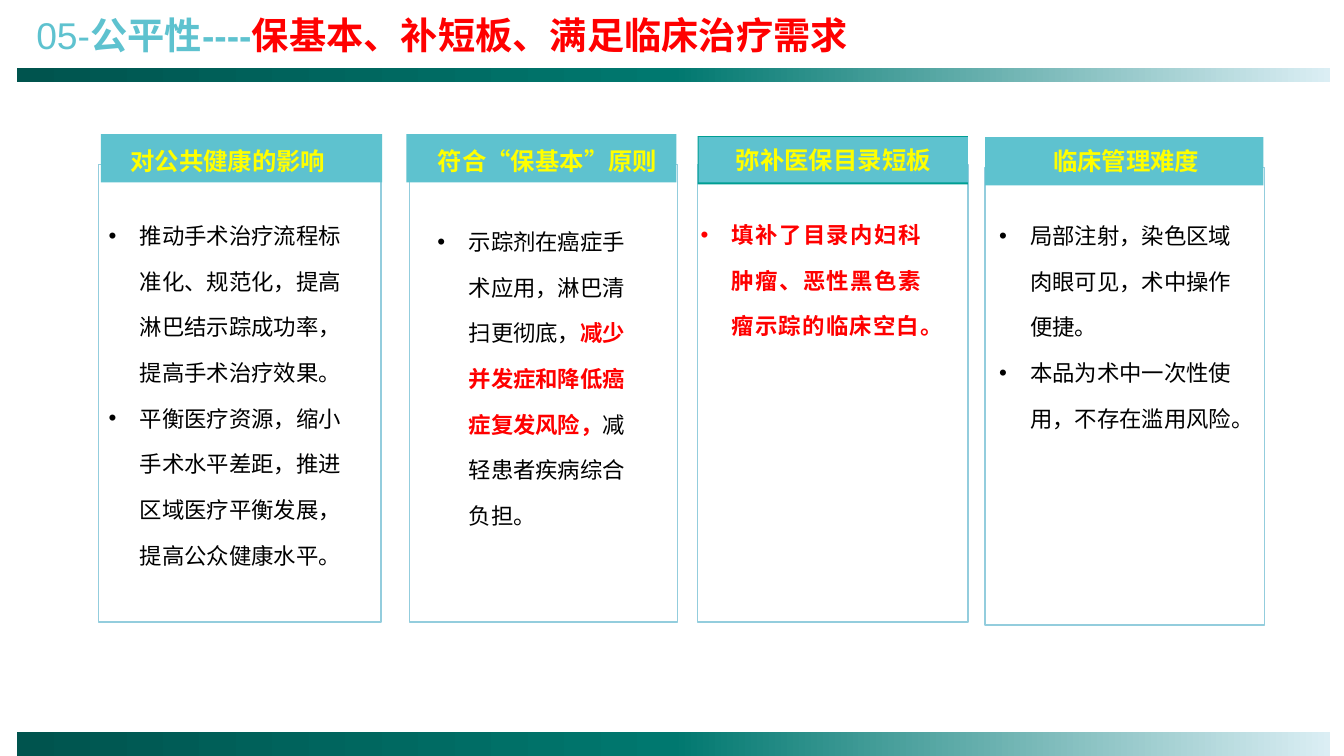
from copy import deepcopy
from dataclasses import dataclass

from lxml import etree
from pptx import Presentation
from pptx.dml.color import RGBColor
from pptx.enum.shapes import MSO_SHAPE as Shape
from pptx.enum.text import MSO_ANCHOR as Anchor, MSO_AUTO_SIZE as AutoSize, PP_ALIGN as Align
from pptx.oxml.ns import qn
from pptx.util import Inches, Pt

COLORS = {
    "teal": "5EC2CF", "deep": "009E93", "outline": "93CDDD", "yellow": "FFFF00",
    "red": "FF0000", "black": "000000",
    "bar_start": "00544E", "bar_middle": "00786F", "bar_end": "DBEEF4",
}
FONT = "Arial"


@dataclass
class Card:
    box: tuple
    band: tuple
    label: tuple
    body: tuple
    heading: str
    paragraphs: list
    band_color: str = "teal"
    label_color: str = ""
    align: Align = Align.LEFT


CARDS = [
    Card((0.98, 1.63, 2.8, 4.54), (0.02, -0.3, 2.79, 0.48), (0.05, -0.26, 2.46, 0.45),
         (0, 0.34, 2.66, 4.11), "对公共健康的影响",
         [[("推动手术治疗流程标准化、规范化，提高淋巴结示踪成功率，提高手术治疗效果。", "black", False)],
          [("平衡医疗资源，缩小手术水平差距，推进区域医疗平衡发展，提高公众健康水平。", "black", False)]]),
    Card((4.06, 1.63, 2.66, 4.54), (-0.03, -0.3, 2.68, 0.48), (0.08, -0.26, 2.58, 0.45),
         (0.18, 0.4, 2.08, 2.84), "符合“保基本”原则",
         [[("示踪剂在癌症手术应用，淋巴清扫更彻底，", "black", False),
           ("减少并发症和降低癌症复发风险，", "red", True),
           ("减轻患者疾病综合负担。", "black", False)]]),
    Card((6.92, 1.63, 2.68, 4.54), (0, -0.28, 2.68, 0.48), (0.01, -0.27, 2.67, 0.45),
         (-0.07, 0.33, 2.38, 1.47), "弥补医保目录短板",
         [[("填补了目录内妇科肿瘤、恶性黑色素瘤示踪的临床空白。", "red", True)]],
         band_color="deep", label_color="teal", align=Align.JUSTIFY),
    Card((9.77, 1.66, 2.77, 4.54), (0, -0.3, 2.76, 0.48), (0.17, -0.29, 2.46, 0.45),
         (0.04, 0.31, 2.58, 2.39), "临床管理难度",
         [[("局部注射，染色区域肉眼可见，术中操作便捷。", "black", False)],
          [("本品为术中一次性使用，不存在滥用风险。", "black", False)]]),
]


def rgb(name):
    return RGBColor.from_string(COLORS[name])


def inches(box):
    return [Inches(length) for length in box]


def inside(box, offset):
    return box[0] + offset[0], box[1] + offset[1], offset[2], offset[3]


def style_font(font, size, color, bold):
    font.name = FONT
    font.size = Pt(size)
    font.bold = bold
    font.color.rgb = rgb(color)


def write_runs(paragraph, pieces, size):
    for text, color, bold in pieces:
        run = paragraph.add_run()
        run.text = text
        if len(pieces) > 1:
            style_font(run.font, size, color, bold)
    if len(pieces) == 1:
        style_font(paragraph.font, size, *pieces[0][1:])


def add_rectangle(slide, box, fill=None, line=None):
    shape = slide.shapes.add_shape(Shape.RECTANGLE, *inches(box))
    shape.shadow.inherit = False
    if fill:
        shape.fill.solid()
        shape.fill.fore_color.rgb = rgb(fill)
    else:
        shape.fill.background()
    if line:
        shape.line.color.rgb = rgb(line)
        shape.line.width = Pt(1)
    else:
        shape.line.fill.background()
    return shape


def add_gradient_bar(slide, box):
    shape = add_rectangle(slide, box)
    shape.fill.gradient()
    shape.fill.gradient_angle = 0
    stop_list = shape._element.spPr.find(".//" + qn("a:gsLst"))
    stop_list.insert(1, deepcopy(stop_list[0]))
    names = ("bar_start", "bar_middle", "bar_end")
    for index, (stop, name) in enumerate(zip(shape.fill.gradient_stops, names)):
        stop.position = index / 2
        stop.color.rgb = rgb(name)


def add_title(slide, box):
    title = slide.shapes.title
    title.left, title.top, title.width, title.height = inches(box)
    frame = title.text_frame
    frame.word_wrap = True
    frame.auto_size = AutoSize.NONE
    frame.vertical_anchor = Anchor.TOP
    paragraph = frame.paragraphs[0]
    paragraph.alignment = Align.LEFT
    write_runs(paragraph, [("05-", "teal", False), ("公平性----", "teal", True),
                           ("保基本、补短板、满足临床治疗需求", "red", True)], 26.6)


def add_heading(slide, box, text, fill):
    shape = add_rectangle(slide, box, fill)
    frame = shape.text_frame
    frame.word_wrap = True
    frame.vertical_anchor = Anchor.MIDDLE
    paragraph = frame.paragraphs[0]
    paragraph.alignment = Align.CENTER
    write_runs(paragraph, [(text, "yellow", True)], 17.4)


def add_bullets(slide, box, paragraphs, align):
    frame = slide.shapes.add_textbox(*inches(box)).text_frame
    frame.word_wrap = True
    for index, pieces in enumerate(paragraphs):
        paragraph = frame.add_paragraph() if index else frame.paragraphs[0]
        paragraph.alignment = align
        paragraph.line_spacing = 1.7
        properties = paragraph._p.get_or_add_pPr()
        properties.set("marL", str(Inches(0.31)))
        properties.set("indent", str(-Inches(0.31)))
        etree.SubElement(properties, qn("a:buFont")).set("typeface", FONT)
        etree.SubElement(properties, qn("a:buChar")).set("char", "•")
        write_runs(paragraph, pieces, 16)


def add_card(slide, card):
    add_rectangle(slide, card.box, line="outline")
    add_rectangle(slide, inside(card.box, card.band), card.band_color)
    add_heading(slide, inside(card.box, card.label), card.heading, card.label_color)
    add_bullets(slide, inside(card.box, card.body), card.paragraphs, card.align)


def main():
    presentation = Presentation()
    presentation.slide_width = Inches(13.33)
    presentation.slide_height = Inches(7.5)
    slide = presentation.slides.add_slide(presentation.slide_layouts[5])
    add_gradient_bar(slide, (0.17, 0.67, 13.02, 0.14))
    add_gradient_bar(slide, (0.17, 7.26, 13.02, 0.27))
    add_title(slide, (0.26, 0.07, 9.89, 0.55))
    for card in CARDS:
        add_card(slide, card)
    presentation.save("out.pptx")


if __name__ == "__main__":
    main()
